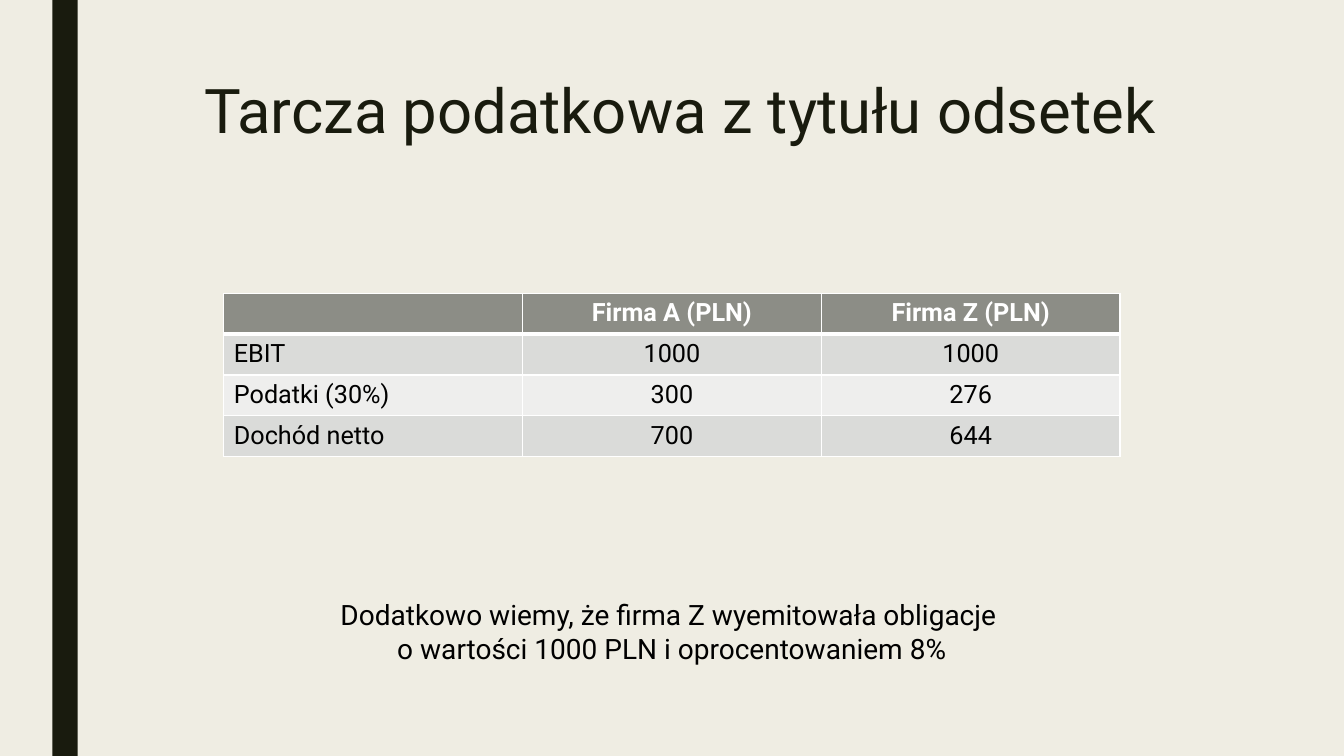
from dataclasses import dataclass

from lxml.etree import SubElement
from pptx import Presentation
from pptx.dml.color import RGBColor
from pptx.enum.shapes import MSO_SHAPE as Shape
from pptx.enum.text import MSO_ANCHOR as Anchor, PP_ALIGN as Align
from pptx.oxml.ns import qn
from pptx.slide import Slide
from pptx.table import _Cell as Cell
from pptx.text.text import TextFrame
from pptx.util import Inches, Pt

CREAM = RGBColor(0xEF, 0xED, 0xE3)
DARK_OLIVE = RGBColor(0x19, 0x1B, 0x0E)
HEADER_GREY = RGBColor(0x8C, 0x8D, 0x86)
BAND_DARK = RGBColor(0xDA, 0xDB, 0xD9)
BAND_LIGHT = RGBColor(0xEE, 0xEE, 0xED)
WHITE = RGBColor(0xFF, 0xFF, 0xFF)
BLACK = RGBColor(0, 0, 0)
FONT = "Roboto"


@dataclass(frozen=True)
class Box:
    left: float
    top: float
    width: float
    height: float

    def lengths(self) -> list[int]:
        return [Inches(v) for v in (self.left, self.top, self.width, self.height)]


@dataclass(frozen=True)
class TextStyle:
    size: int
    color: RGBColor
    bold: bool = False
    align: Align = Align.CENTER
    line_spacing: float = 1.0


STRIPE_BOX = Box(0.52, 0, 0.25, 7.5)
TITLE_BOX = Box(1.5, 0.75, 10.5, 1.62)
TABLE_BOX = Box(2.22, 2.91, 8.89, 1.62)
NOTE_BOX = Box(1.48, 5.88, 10.37, 0.77)

TITLE_STYLE = TextStyle(44, DARK_OLIVE, line_spacing=0.89)
NOTE_STYLE = TextStyle(20, BLACK)
HEADER_STYLE = TextStyle(18, WHITE, bold=True)
LABEL_STYLE = TextStyle(18, BLACK, align=Align.LEFT)
VALUE_STYLE = TextStyle(18, BLACK)

TITLE = "Tarcza podatkowa z tytułu odsetek"
NOTE = ("Dodatkowo wiemy, że firma Z wyemitowała obligacje \n"
        "o wartości 1000 PLN i oprocentowaniem 8%")
TAX_ROWS = [
    ("", "Firma A (PLN)", "Firma Z (PLN)"),
    ("EBIT", "1000", "1000"),
    ("Podatki (30%)", "300", "276"),
    ("Dochód netto", "700", "644"),
]


def write(frame: TextFrame, text: str, style: TextStyle) -> None:
    frame.text = text
    frame.word_wrap = True
    font_format = {"name": FONT, "size": Pt(style.size), "bold": style.bold}
    for paragraph in frame.paragraphs:
        paragraph.alignment = style.align
        paragraph.line_spacing = style.line_spacing
        for run in paragraph.runs:
            for name, value in font_format.items():
                setattr(run.font, name, value)
            run.font.color.rgb = style.color


def set_borders(cell: Cell, widths: dict[str, int]) -> None:
    """Draw white borders; call before filling, as borders come first in the XML."""
    properties = cell._tc.get_or_add_tcPr()
    for side, width in widths.items():
        line = SubElement(properties, qn(f"a:ln{side}"), w=str(Pt(width)))
        SubElement(SubElement(line, qn("a:solidFill")), qn("a:srgbClr"), val=str(WHITE))


def add_stripe(slide: Slide) -> None:
    stripe = slide.shapes.add_shape(Shape.RECTANGLE, *STRIPE_BOX.lengths())
    stripe.shadow.inherit = False
    stripe.fill.solid()
    stripe.fill.fore_color.rgb = DARK_OLIVE
    stripe.line.fill.background()


def add_title(slide: Slide) -> None:
    title = slide.shapes.title
    for name, value in zip(("left", "top", "width", "height"), TITLE_BOX.lengths()):
        setattr(title, name, value)
    write(title.text_frame, TITLE, TITLE_STYLE)
    title.text_frame.vertical_anchor = Anchor.TOP


def add_tax_table(slide: Slide) -> None:
    row_count, column_count = len(TAX_ROWS), len(TAX_ROWS[0])
    table = slide.shapes.add_table(row_count, column_count, *TABLE_BOX.lengths()).table
    for row_index, texts in enumerate(TAX_ROWS):
        is_header = row_index == 0
        band = BAND_DARK if row_index % 2 else BAND_LIGHT
        borders = {"L": 1, "R": 1, "T": 3 if row_index == 1 else 1, "B": 3 if is_header else 1}
        for column_index, text in enumerate(texts):
            cell = table.cell(row_index, column_index)
            body_style = VALUE_STYLE if column_index else LABEL_STYLE
            write(cell.text_frame, text, HEADER_STYLE if is_header else body_style)
            set_borders(cell, borders)
            cell.fill.solid()
            cell.fill.fore_color.rgb = HEADER_GREY if is_header else band


def add_note(slide: Slide) -> None:
    note = slide.shapes.add_textbox(*NOTE_BOX.lengths())
    write(note.text_frame, NOTE, NOTE_STYLE)


def main() -> None:
    presentation = Presentation()
    presentation.slide_width, presentation.slide_height = Inches(13.33), Inches(7.5)
    title_only = presentation.slide_layouts[5]
    slide = presentation.slides.add_slide(title_only)
    slide.background.fill.solid()
    slide.background.fill.fore_color.rgb = CREAM
    add_stripe(slide)
    add_title(slide)
    add_tax_table(slide)
    add_note(slide)
    presentation.save("out.pptx")


if __name__ == "__main__":
    main()
